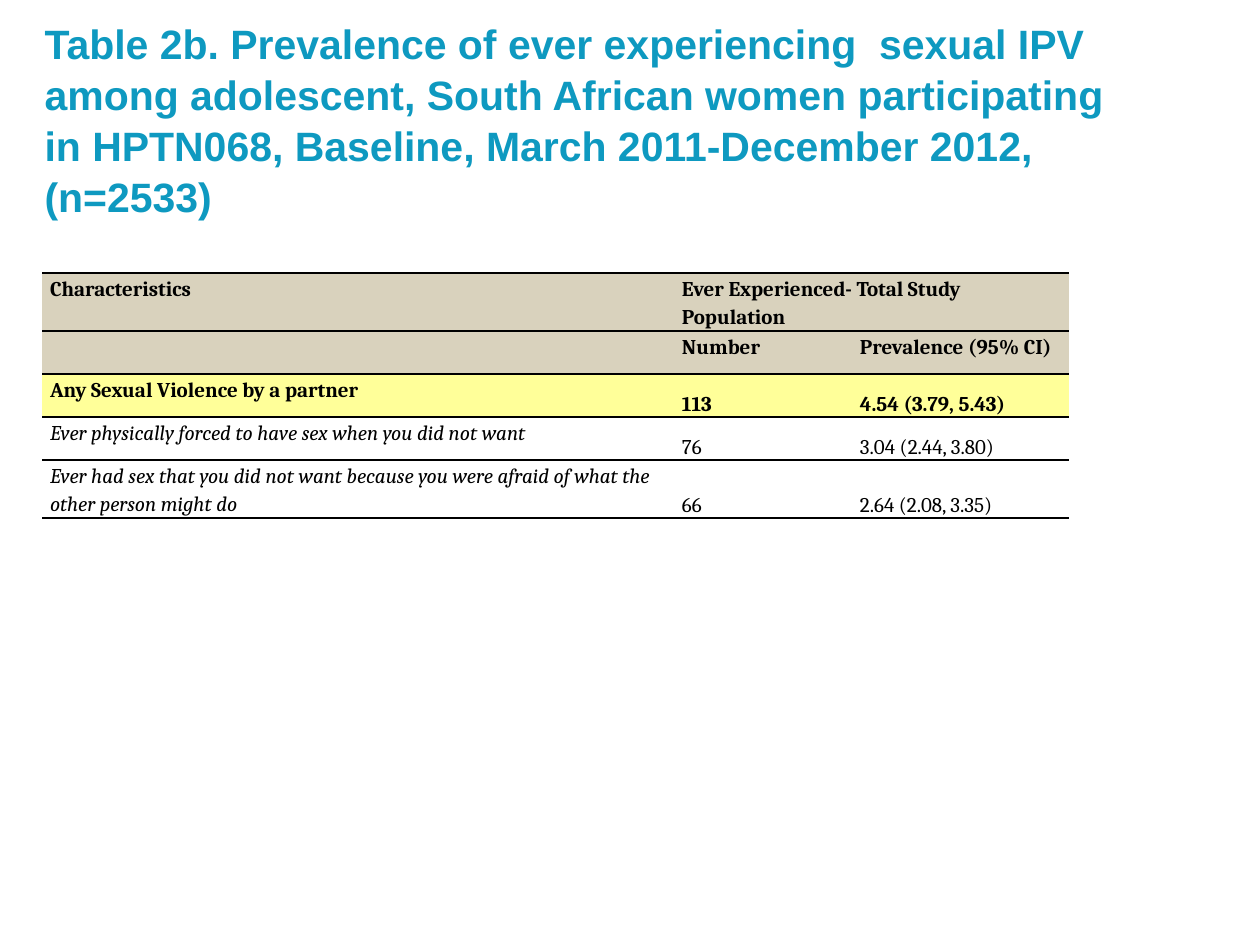
import dataclasses

import lxml.etree
import pptx
import pptx.dml.color
import pptx.enum.text
import pptx.oxml
import pptx.oxml.ns
import pptx.util


@dataclasses.dataclass(frozen=True)
class Theme:
    title_color: str = "0E99C0"
    text_color: str = "000000"
    header_fill: str = "D9D2BD"
    highlight_fill: str = "FFFF99"
    title_font: str = "Arial"
    table_font: str = "Cambria"
    title_size: float = 23.4
    table_size: float = 12
    rule_width: float = 1


THEME = Theme()
PLAIN_TABLE_STYLE = "{2D5ABB26-0587-4C30-8999-92F81FD0307C}"
rgb = pptx.dml.color.RGBColor.from_string


def px(length):
    """Turn px, at 126 to the inch, into EMU."""
    return pptx.util.Emu(round(length * 914400 / 126))


def add_rules(cell):
    """Draw the lines above and below a table cell."""
    properties = cell._tc.get_or_add_tcPr()
    for position, side in enumerate(("lnT", "lnB")):
        line = pptx.oxml.parse_xml(
            f'<a:{side} {pptx.oxml.ns.nsdecls("a")} w="{pptx.util.Pt(THEME.rule_width)}">'
            f'<a:solidFill><a:srgbClr val="{THEME.text_color}"/></a:solidFill></a:{side}>'
        )
        properties.insert(position, line)


presentation = pptx.Presentation()
presentation.slide_width = px(1260)
presentation.slide_height = px(945)
slide = presentation.slides.add_slide(presentation.slide_layouts[5])

# Title
title = slide.shapes.title
title.left, title.top, title.width, title.height = px(32), px(38), px(1092), px(161)
frame = title.text_frame
frame.text = (
    "Table 2b. Prevalence of ever experiencing  sexual IPV among adolescent, "
    "South African women participating in HPTN068, Baseline, "
    "March 2011-December 2012, (n=2533)"
)
frame.word_wrap = True
frame.auto_size = pptx.enum.text.MSO_AUTO_SIZE.NONE
frame.vertical_anchor = pptx.enum.text.MSO_ANCHOR.MIDDLE
paragraph = frame.paragraphs[0]
paragraph.alignment = pptx.enum.text.PP_ALIGN.LEFT
paragraph.line_spacing = 1.04
paragraph.font.name = THEME.title_font
paragraph.font.size = pptx.util.Pt(THEME.title_size)
paragraph.font.bold = True
paragraph.font.color.rgb = rgb(THEME.title_color)

# Prevalence table: row height, fill, bold, texts
column_widths = [632, 178, 217]
rows = [
    (58, THEME.header_fill, True, ["Characteristics", "Ever Experienced- Total Study Population", ""]),
    (43, THEME.header_fill, True, ["", "Number", "Prevalence (95% CI)"]),
    (43, THEME.highlight_fill, True, ["Any Sexual Violence by a partner", "113", "4.54 (3.79, 5.43)"]),
    (43, None, False, ["Ever physically forced to have sex when you did not want", "76", "3.04 (2.44, 3.80)"]),
    (58, None, False, [
        "Ever had sex that you did not want because you were afraid of what the other person might do",
        "66", "2.64 (2.08, 3.35)",
    ]),
]
header_rows = 2
table_height = sum(row[0] for row in rows)
table = slide.shapes.add_table(
    len(rows), len(column_widths), px(42), px(273), px(sum(column_widths)), px(table_height)
).table
table._tbl.tblPr.find(pptx.oxml.ns.qn("a:tableStyleId")).text = PLAIN_TABLE_STYLE
table.horz_banding = False

for column, width in zip(table.columns, column_widths):
    column.width = px(width)

for row_index, (height, fill, bold, texts) in enumerate(rows):
    table.rows[row_index].height = px(height)
    for column_index, text in enumerate(texts):
        cell = table.cell(row_index, column_index)
        cell.text = text
        cell.margin_left = cell.margin_right = px(8)
        cell.margin_top, cell.margin_bottom = px(1), px(0)
        is_value = row_index >= header_rows and column_index > 0
        cell.vertical_anchor = (
            pptx.enum.text.MSO_ANCHOR.BOTTOM if is_value else pptx.enum.text.MSO_ANCHOR.TOP
        )
        if fill:
            cell.fill.solid()
            cell.fill.fore_color.rgb = rgb(fill)
        else:
            cell.fill.background()
        add_rules(cell)
        paragraph = cell.text_frame.paragraphs[0]
        paragraph.line_spacing = 1.15
        paragraph.font.name = THEME.table_font
        paragraph.font.size = pptx.util.Pt(THEME.table_size)
        paragraph.font.bold = bold
        paragraph.font.italic = not bold and column_index == 0
        paragraph.font.color.rgb = rgb(THEME.text_color)

table.cell(0, 1).merge(table.cell(0, 2))

presentation.save("out.pptx")
